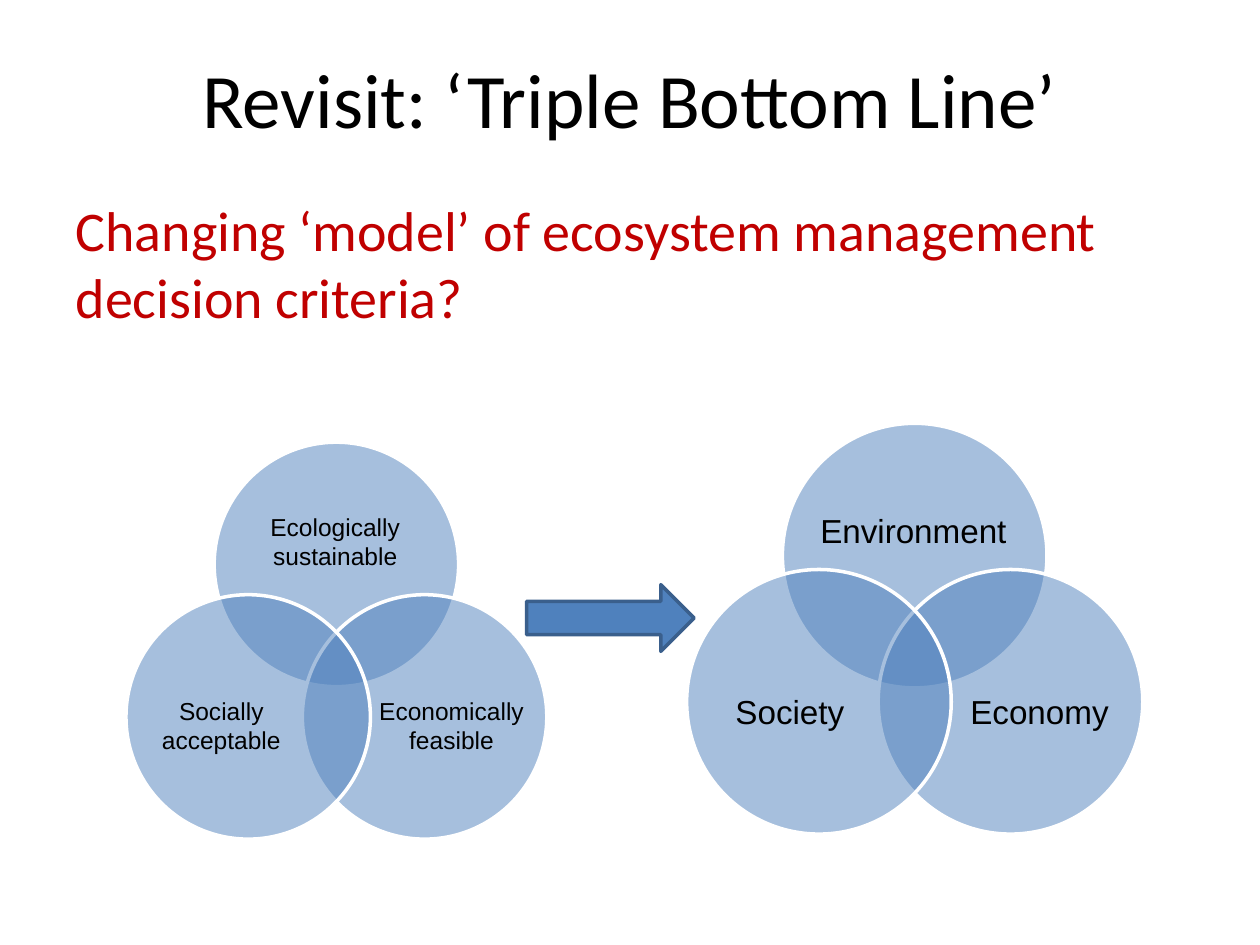
from lxml.etree import SubElement
from pptx import Presentation
from pptx.dml.color import RGBColor
from pptx.enum.shapes import MSO_SHAPE
from pptx.enum.text import MSO_ANCHOR, PP_ALIGN
from pptx.oxml.ns import qn
from pptx.util import Inches, Pt

BLACK = RGBColor(0x00, 0x00, 0x00)
WHITE = RGBColor(0xFF, 0xFF, 0xFF)
RED = RGBColor(0xC0, 0x00, 0x00)
BLUE = RGBColor(0x4F, 0x81, 0xBD)
DARK_BLUE = RGBColor(0x3A, 0x5F, 0x8C)

TITLE = "Revisit: ‘Triple Bottom Line’"
QUESTION = "Changing ‘model’ of ecosystem management decision criteria?"

# center and top of the upper circle; side and drop shift the lower pair
VENNS = [
    {"center": 2.67, "top": 3.51, "diameter": 1.94, "side": 0.7, "drop": 1.21, "size": 14,
     "labels": ["Ecologically sustainable", "Economically\nfeasible", "Socially acceptable"]},
    {"center": 7.26, "top": 3.36, "diameter": 2.1, "side": 0.76, "drop": 1.16, "size": 19,
     "labels": ["Environment", "Economy", "Society"]},
]
# Upper, right, left: side factor, drop factor, and the label's
# left, top, width and height as shares of the diameter
CIRCLES = [
    (0, 0, (0.13, 0.18, 0.73, 0.45)),
    (1, 1, (0.31, 0.26, 0.6, 0.55)),
    (-1, 1, (0.09, 0.26, 0.6, 0.55)),
]


def format_text(frame, font_name, size, color, alignment):
    for para in frame.paragraphs:
        para.alignment = alignment
        for span in para.runs:
            span.font.name = font_name
            span.font.size = Pt(size)
            span.font.color.rgb = color


def fill_placeholder(placeholder, bounds, text, size, color, alignment):
    placeholder.left, placeholder.top, placeholder.width, placeholder.height = map(Inches, bounds)
    placeholder.text_frame.text = text
    format_text(placeholder.text_frame, "Calibri", size, color, alignment)


def add_filled_shape(shapes, kind, bounds, line_color):
    shape = shapes.add_shape(kind, *map(Inches, bounds))
    shape.shadow.inherit = False
    shape.fill.solid()
    shape.fill.fore_color.rgb = BLUE
    shape.line.color.rgb = line_color
    shape.line.width = Pt(2)
    return shape


def add_label(shapes, bounds, text, size):
    box = shapes.add_textbox(*map(Inches, bounds))
    frame = box.text_frame
    frame.word_wrap = True
    frame.vertical_anchor = MSO_ANCHOR.MIDDLE
    frame.margin_left = frame.margin_right = frame.margin_top = frame.margin_bottom = 0
    frame.text = text
    format_text(frame, "Arial", size, BLACK, PP_ALIGN.CENTER)


def add_venn(slide, venn):
    shapes = slide.shapes.add_group_shape().shapes
    diameter = venn["diameter"]
    for (side, drop, (x, y, width, height)), label in zip(CIRCLES, venn["labels"]):
        left = venn["center"] - diameter / 2 + side * venn["side"]
        top = venn["top"] + drop * venn["drop"]
        circle = add_filled_shape(shapes, MSO_SHAPE.OVAL, (left, top, diameter, diameter), WHITE)
        color = circle.fill._xPr.find(qn("a:solidFill"))[0]
        SubElement(color, qn("a:alpha"), val="50000")
        add_label(shapes, (left + x * diameter, top + y * diameter,
                           width * diameter, height * diameter), label, venn["size"])


def main():
    deck = Presentation()
    deck.slide_width, deck.slide_height = Inches(10), Inches(7.5)
    slide = deck.slides.add_slide(deck.slide_layouts[1])

    fill_placeholder(slide.shapes.title, (0.5, 0.3, 9, 0.95), TITLE, 44, BLACK, PP_ALIGN.CENTER)
    body = slide.placeholders[1]
    fill_placeholder(body, (0.5, 1.5, 8.58, 1.75), QUESTION, 32, RED, PP_ALIGN.LEFT)
    properties = body.text_frame.paragraphs[0]._p.get_or_add_pPr()
    properties.set("marL", "0")
    properties.set("indent", "0")
    SubElement(properties, qn("a:buNone"))

    for venn in VENNS:
        add_venn(slide, venn)
    add_filled_shape(slide.shapes, MSO_SHAPE.RIGHT_ARROW, (4.18, 4.64, 1.33, 0.53), DARK_BLUE)
    deck.save("out.pptx")


if __name__ == "__main__":
    main()
